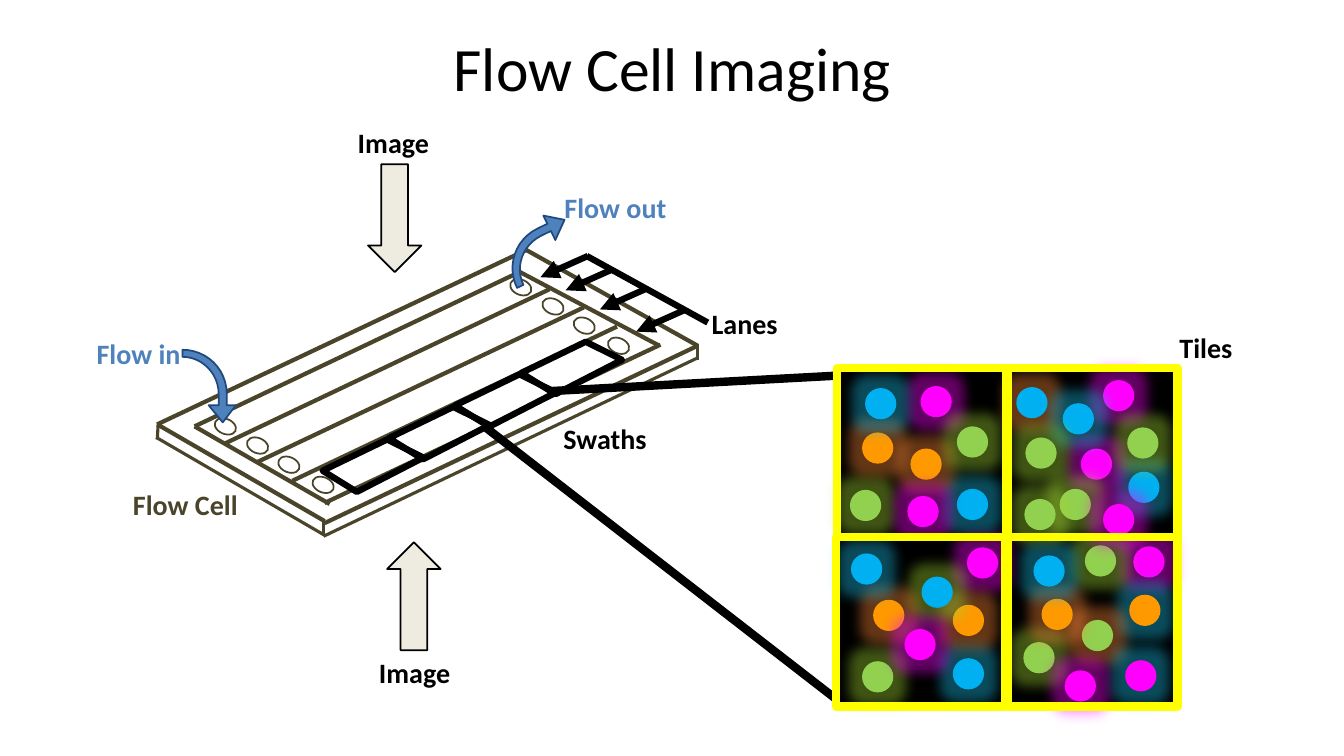
"""Build the Flow Cell Imaging slide."""
from dataclasses import dataclass
from typing import Optional

from lxml.etree import SubElement
from pptx import Presentation
from pptx.dml.color import RGBColor
from pptx.enum.shapes import MSO_CONNECTOR, MSO_SHAPE
from pptx.enum.text import MSO_ANCHOR, PP_ALIGN
from pptx.oxml.ns import qn
from pptx.util import Inches, Pt

Point = tuple[float, float]

BLACK = RGBColor(0x00, 0x00, 0x00)
BROWN = RGBColor(0x4A, 0x45, 0x2A)
CREAM = RGBColor(0xEE, 0xEC, 0xE1)
FLOW_BLUE = RGBColor(0x4F, 0x81, 0xBD)
NAVY = RGBColor(0x1F, 0x49, 0x7D)
YELLOW = RGBColor(0xFF, 0xFF, 0x00)
MAGENTA = RGBColor(0xFF, 0x00, 0xFF)
CYAN = RGBColor(0x00, 0xB0, 0xF0)
ORANGE = RGBColor(0xFF, 0x99, 0x00)
GREEN = RGBColor(0x92, 0xD0, 0x50)
GLOWS = {MAGENTA: "FF00FF", CYAN: "1CBFE8", ORANGE: "FF8A38", GREEN: "A2D733"}
DOT_SIZE = 0.31


@dataclass
class Label:
    text: str
    left: float
    top: float
    width: float
    color: RGBColor = BLACK
    wrap: bool = False


@dataclass
class Dot:
    left: float
    top: float
    color: RGBColor
    glow: Optional[RGBColor] = None


@dataclass
class Tile:
    left: float
    top: float
    dots: list[Dot]


LABELS = [
    Label("Image", 3.45, 1.2, 1.04, wrap=True), Label("Image", 3.66, 6.45, 1.06, wrap=True),
    Label("Flow in", 0.86, 3.29, 1.04, FLOW_BLUE), Label("Flow out", 5.5, 1.84, 1.22, FLOW_BLUE),
    Label("Tiles", 11.6, 3.23, 0.73), Label("Lanes", 6.96, 2.99, 0.86),
    Label("Swaths", 5.49, 4.13, 1.03), Label("Flow Cell", 1.22, 4.79, 1.25, BROWN),
]
TOP_EDGES = [
    ((3.22, 4.99), (6.55, 3.42)), ((6.54, 3.43), (5.14, 2.69)), ((1.93, 4.23), (5.15, 2.7)),
    ((3.27, 5), (1.93, 4.23)), ((2.23, 4.4), (5.45, 2.87)), ((2.56, 4.58), (5.79, 3.05)),
    ((2.9, 4.77), (6.12, 3.24)), ((3.22, 5.19), (6.92, 3.43)), ((6.92, 3.43), (5.22, 2.48)),
    ((1.56, 4.21), (5.22, 2.48)), ((3.22, 5.17), (1.56, 4.21)),
]
SIDE_EDGES = [
    ((1.57, 4.19), (1.56, 4.36)), ((1.55, 4.34), (3.22, 5.31)), ((3.21, 5.16), (3.21, 5.32)),
    ((3.21, 5.32), (6.92, 3.55)), ((6.92, 3.41), (6.92, 3.57)),
]
PORT_OFFSETS = [(0, 0), (0.32, 0.19), (0.63, 0.38), (0.97, 0.58)]
LANE_STARTS = [(5.83, 2.54), (6.08, 2.67), (6.42, 2.86), (6.78, 3.08)]
SWATH = [(5.81, 3.39), (6.17, 3.57), (5.51, 3.91), (5.17, 3.7)]
TILES = [
    Tile(8.32, 3.69, [
        Dot(9.13, 3.83, MAGENTA), Dot(9.49, 4.85, CYAN), Dot(9.03, 4.45, ORANGE),
        Dot(9.49, 4.23, GREEN), Dot(8.43, 4.86, GREEN), Dot(8.55, 4.29, ORANGE),
        Dot(9, 4.92, MAGENTA), Dot(8.58, 3.85, CYAN)]),
    Tile(9.98, 5.35, [
        Dot(11.24, 5.42, MAGENTA), Dot(11.2, 5.9, ORANGE, CYAN), Dot(10.73, 6.15, GREEN, ORANGE),
        Dot(10.76, 5.41, GREEN), Dot(10.15, 6.37, GREEN), Dot(10.33, 5.94, ORANGE),
        Dot(10.56, 6.65, MAGENTA), Dot(10.25, 5.51, CYAN), Dot(11.16, 6.55, MAGENTA, CYAN)]),
    Tile(10, 3.69, [
        Dot(10.94, 3.77, MAGENTA), Dot(11.19, 4.68, CYAN), Dot(10.72, 4.45, MAGENTA),
        Dot(11.18, 4.24, GREEN), Dot(10.51, 4.85, GREEN), Dot(10.08, 3.84, CYAN, ORANGE),
        Dot(10.94, 5, MAGENTA), Dot(10.54, 4, CYAN), Dot(10.16, 4.95, GREEN),
        Dot(10.17, 4.34, GREEN)]),
    Tile(8.31, 5.35, [
        Dot(9.59, 5.43, MAGENTA), Dot(9.45, 6.53, CYAN), Dot(9.45, 6, ORANGE),
        Dot(9.14, 5.72, CYAN, GREEN), Dot(8.55, 6.56, GREEN), Dot(8.66, 5.95, ORANGE),
        Dot(8.97, 6.24, MAGENTA), Dot(8.44, 5.49, CYAN)]),
]

deck = Presentation()
deck.slide_width, deck.slide_height = Inches(13.33), Inches(7.5)
page = deck.slides.add_slide(deck.slide_layouts[6])


def paint(shape, fill: Optional[RGBColor], line: Optional[RGBColor], weight: float = 1.25):
    shape.shadow.inherit = False
    if fill is None:
        shape.fill.background()
    else:
        shape.fill.solid()
        shape.fill.fore_color.rgb = fill
    if line is None:
        shape.line.fill.background()
    else:
        shape.line.color.rgb = line
        shape.line.width = Pt(weight)
    return shape


def add_preset(kind: MSO_SHAPE, left: float, top: float, width: float, height: float,
               fill: Optional[RGBColor], line: Optional[RGBColor],
               weight: float = 1.25, rotation: float = 0):
    shape = page.shapes.add_shape(kind, Inches(left), Inches(top), Inches(width), Inches(height))
    shape.rotation = rotation
    return paint(shape, fill, line, weight)


def add_outline(points: list[Point], fill: Optional[RGBColor], line: RGBColor, weight: float):
    corners = [(Inches(x), Inches(y)) for x, y in points]
    builder = page.shapes.build_freeform(*corners[0])
    builder.add_line_segments(corners[1:], close=True)
    return paint(builder.convert_to_shape(), fill, line, weight)


def add_line(start: Point, end: Point, color: RGBColor, weight: float, arrow: bool = False) -> None:
    line = page.shapes.add_connector(
        MSO_CONNECTOR.STRAIGHT, *(Inches(length) for length in (*start, *end)))
    line.line.color.rgb = color
    line.line.width = Pt(weight)
    if arrow:
        SubElement(line.element.spPr.find(qn("a:ln")), qn("a:tailEnd"), type="triangle")
    SubElement(line.element.spPr, qn("a:effectLst"))


def add_text(label: Label, height: float = 0.44, size: float = 20, bold: bool = True):
    box = page.shapes.add_textbox(
        Inches(label.left), Inches(label.top), Inches(label.width), Inches(height))
    box.text_frame.word_wrap = label.wrap
    para = box.text_frame.paragraphs[0]
    para.text = label.text
    para.font.name, para.font.size, para.font.bold = "Calibri", Pt(size), bold
    para.font.color.rgb = label.color
    return box.text_frame


def add_dot(dot: Dot) -> None:
    shape = add_preset(MSO_SHAPE.OVAL, dot.left, dot.top, DOT_SIZE, DOT_SIZE, dot.color, None)
    effects = shape.element.spPr.find(qn("a:effectLst"))
    glow = SubElement(effects, qn("a:glow"), rad=str(Pt(18)))
    color = SubElement(glow, qn("a:srgbClr"), val=GLOWS[dot.glow or dot.color])
    SubElement(color, qn("a:alpha"), val="40000")


def curve(start: Point, first: Point, second: Point, end: Point, steps: int = 12) -> list[Point]:
    def blend(t: float, axis: int) -> float:
        return ((1 - t) ** 3 * start[axis] + 3 * (1 - t) ** 2 * t * first[axis]
                + 3 * (1 - t) * t ** 2 * second[axis] + t ** 3 * end[axis])
    return [(blend(i / steps, 0), blend(i / steps, 1)) for i in range(steps + 1)]


def add_flow_arrow(left: float, top: float, rotation: float = 0) -> None:
    outer = curve((0, 0), (0.24, 0), (0.44, 0.19), (0.44, 0.44))
    head = [(0.44, 0.55), (0.53, 0.55), (0.4, 0.72), (0.26, 0.55), (0.36, 0.55)]
    inner = curve((0.36, 0.44), (0.36, 0.24), (0.2, 0.07), (0, 0.07))
    points = [(left + x, top + y) for x, y in outer + head + inner]
    add_outline(points, FLOW_BLUE, NAVY, 1.25).rotation = rotation


def main() -> None:
    title = add_text(Label("Flow Cell Imaging", 0.67, 0.04, 12, wrap=True), 1.25, 44, False)
    title.vertical_anchor = MSO_ANCHOR.MIDDLE
    title.paragraphs[0].alignment = PP_ALIGN.CENTER
    for left, top, rotation in [(3.65, 1.63, 0), (3.84, 5.38, 180)]:
        add_preset(MSO_SHAPE.DOWN_ARROW, left, top, 0.53, 1.07, CREAM, BLACK, rotation=rotation)
    for edges, weight in [(TOP_EDGES, 3), (SIDE_EDGES, 2.25)]:
        for start, end in edges:
            add_line(start, end, BROWN, weight)
    for left, top in [(2.16, 4.12), (5.09, 2.74)]:
        for across, down in PORT_OFFSETS:
            add_preset(MSO_SHAPE.OVAL, left + across, top + down, 0.15, 0.22,
                       None, BROWN, rotation=292.8)
    add_flow_arrow(1.81, 3.47)
    add_flow_arrow(5.07, 2.1, 243.9)
    add_preset(MSO_SHAPE.RECTANGLE, 8.31, 3.69, 3.34, 3.34, BLACK, None)
    for tile in TILES:
        add_preset(MSO_SHAPE.RECTANGLE, tile.left, tile.top, 1.65, 1.65, BLACK, BLACK)
        for dot in tile.dots:
            add_dot(dot)
    for x, y in LANE_STARTS:
        add_line((x, y), (x - 0.47, y + 0.21), BLACK, 4.5, arrow=True)
    add_line((5.82, 2.54), (7.02, 3.2), BLACK, 4.5)
    for index in range(4):
        across, down = 1.97 * index / 3, 0.97 * index / 3
        add_outline([(x - across, y + down) for x, y in SWATH], None, BLACK, 4.5)
    add_line((4.79, 4.22), (8.35, 6.98), BLACK, 6)
    add_line((5.46, 3.88), (8.43, 3.72), BLACK, 6)
    for left, top in [(10, 5.33), (10, 3.65), (8.3, 3.65), (8.29, 5.33)]:
        add_preset(MSO_SHAPE.RECTANGLE, left, top, 1.68, 1.68, None, YELLOW, 6)
    for label in LABELS:
        add_text(label)
    deck.save("out.pptx")


if __name__ == "__main__":
    main()
